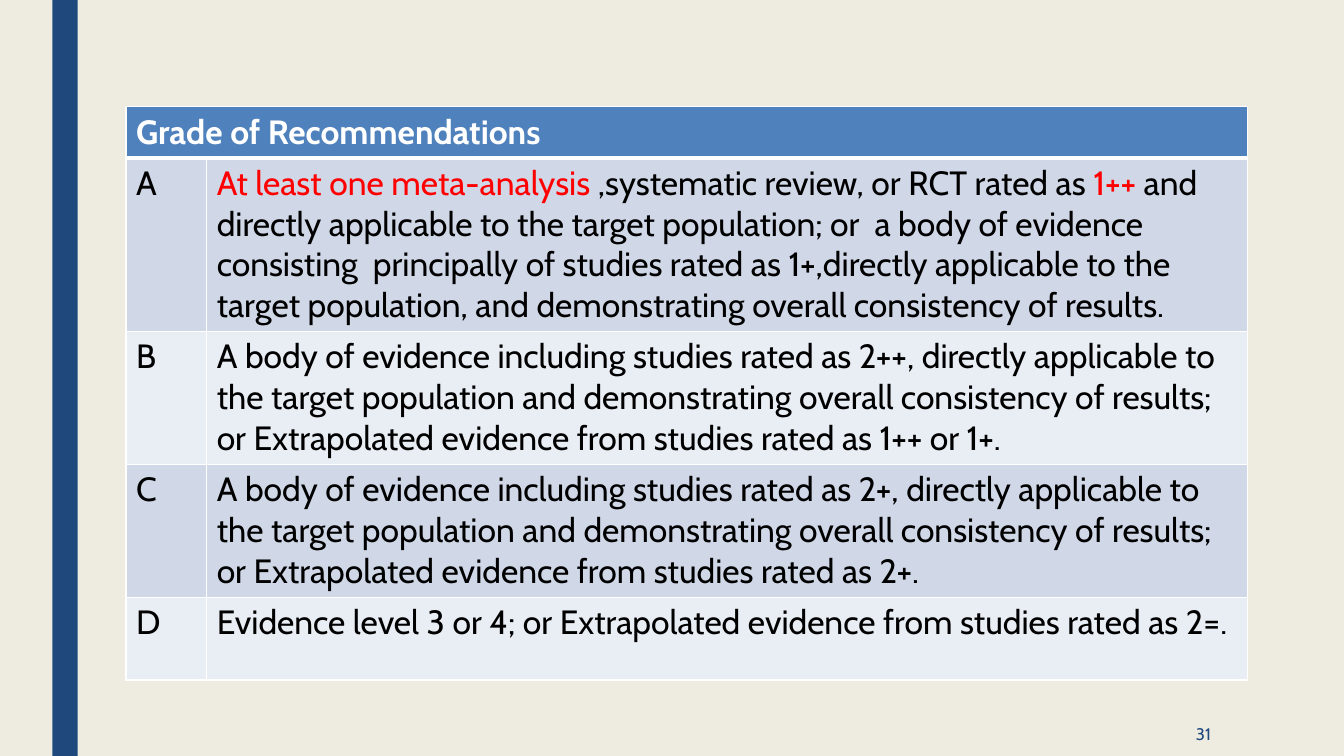
from lxml.etree import SubElement
from pptx import Presentation
from pptx.dml.color import RGBColor
from pptx.enum.shapes import MSO_SHAPE
from pptx.enum.text import MSO_ANCHOR, PP_ALIGN
from pptx.oxml.ns import qn
from pptx.util import Inches, Pt

NAVY, RED, BLACK, WHITE = "1F497D", "FF0000", "000000", "FFFFFF"
HEADER_FILL, BAND_FILLS = "4F81BD", ("D0D8E8", "E9EDF4")
COLUMN_WIDTHS = (0.8, 10.32)
ROW_HEIGHTS = (0.5, 1.72, 1.32, 1.32, 0.82)
GRADES = (
    ("A", (
        ("At least one meta-analysis", RED),
        (" ,systematic review, or RCT rated as ", BLACK),
        ("1++", RED),
        (" and directly applicable to the target population; or  a body of evidence "
         "consisting  principally of studies rated as 1+,directly applicable to the "
         "target population, and demonstrating overall consistency of results.", BLACK),
    )),
    ("B", ((
        "A body of evidence including studies rated as 2++, directly applicable to the "
        "target population and demonstrating overall consistency of results; or "
        "Extrapolated evidence from studies rated as 1++ or 1+.", BLACK),)),
    ("C", ((
        "A body of evidence including studies rated as 2+, directly applicable to the "
        "target population and demonstrating overall consistency of results; or "
        "Extrapolated evidence from studies rated as 2+.", BLACK),)),
    ("D", ((
        "Evidence level 3 or 4; or Extrapolated evidence from studies rated as 2=.", BLACK),)),
)


def color(hex_string):
    return RGBColor.from_string(hex_string)


def add_text(paragraph, text, size=24, ink=BLACK, bold=False, align=PP_ALIGN.LEFT):
    paragraph.alignment = align
    run = paragraph.add_run()
    run.text = text
    run.font.name = "Cabin"
    run.font.size = Pt(size)
    run.font.bold = bold
    run.font.color.rgb = color(ink)


presentation = Presentation()
presentation.slide_width = Inches(13.33)
presentation.slide_height = Inches(7.5)
slide = presentation.slides.add_slide(presentation.slide_layouts[6])
slide.background.fill.solid()
slide.background.fill.fore_color.rgb = color("EEECE1")

side_bar = slide.shapes.add_shape(
    MSO_SHAPE.RECTANGLE, Inches(0.52), 0, Inches(0.25), presentation.slide_height)
side_bar.shadow.inherit = False
side_bar.fill.solid()
side_bar.fill.fore_color.rgb = color(NAVY)
side_bar.line.fill.background()

table = slide.shapes.add_table(
    len(ROW_HEIGHTS), len(COLUMN_WIDTHS), Inches(1.25), Inches(1.06),
    Inches(sum(COLUMN_WIDTHS)), Inches(sum(ROW_HEIGHTS))).table
for column, width in zip(table.columns, COLUMN_WIDTHS):
    column.width = Inches(width)
for row, height in zip(table.rows, ROW_HEIGHTS):
    row.height = Inches(height)
table.cell(0, 0).merge(table.cell(0, 1))

for row_index, row in enumerate(table.rows):
    for cell in row.cells:
        properties = cell._tc.get_or_add_tcPr()
        for side in ("L", "R", "T", "B"):
            heavy = (row_index, side) in ((0, "B"), (1, "T"))
            border = SubElement(properties, qn(f"a:ln{side}"), w=str(Pt(3 if heavy else 1)))
            border_fill = SubElement(border, qn("a:solidFill"))
            SubElement(border_fill, qn("a:srgbClr"), val=WHITE)
        cell.fill.solid()
        cell.fill.fore_color.rgb = color(
            BAND_FILLS[(row_index - 1) % 2] if row_index else HEADER_FILL)

add_text(table.cell(0, 0).text_frame.paragraphs[0], "Grade of Recommendations",
         ink=WHITE, bold=True)
for row_index, (grade, evidence) in enumerate(GRADES, start=1):
    add_text(table.cell(row_index, 0).text_frame.paragraphs[0], grade)
    for text, ink in evidence:
        add_text(table.cell(row_index, 1).text_frame.paragraphs[0], text, ink=ink)

page_number = slide.shapes.add_textbox(
    Inches(10.36), Inches(7.06), Inches(1.75), Inches(0.44)).text_frame
page_number.word_wrap = True
page_number.vertical_anchor = MSO_ANCHOR.MIDDLE
add_text(page_number.paragraphs[0], "31", size=12, ink=NAVY, align=PP_ALIGN.RIGHT)

presentation.save("out.pptx")
